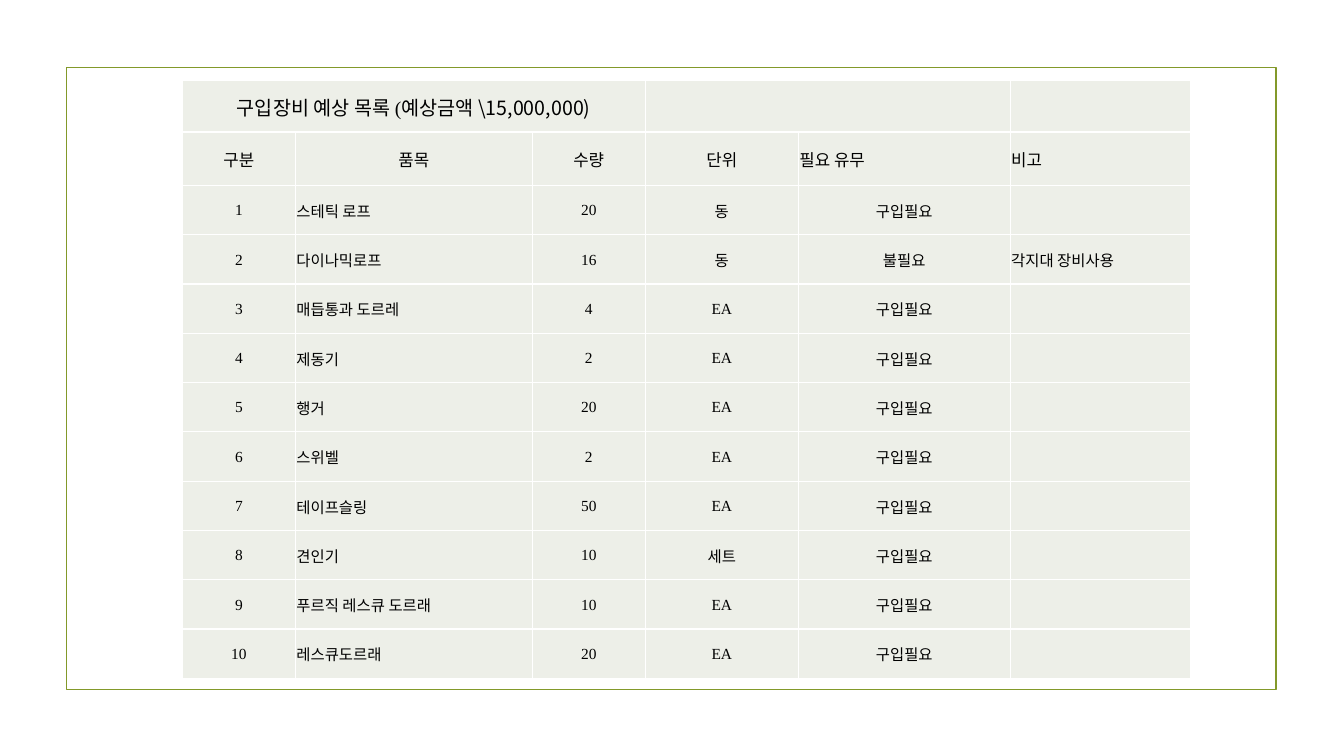
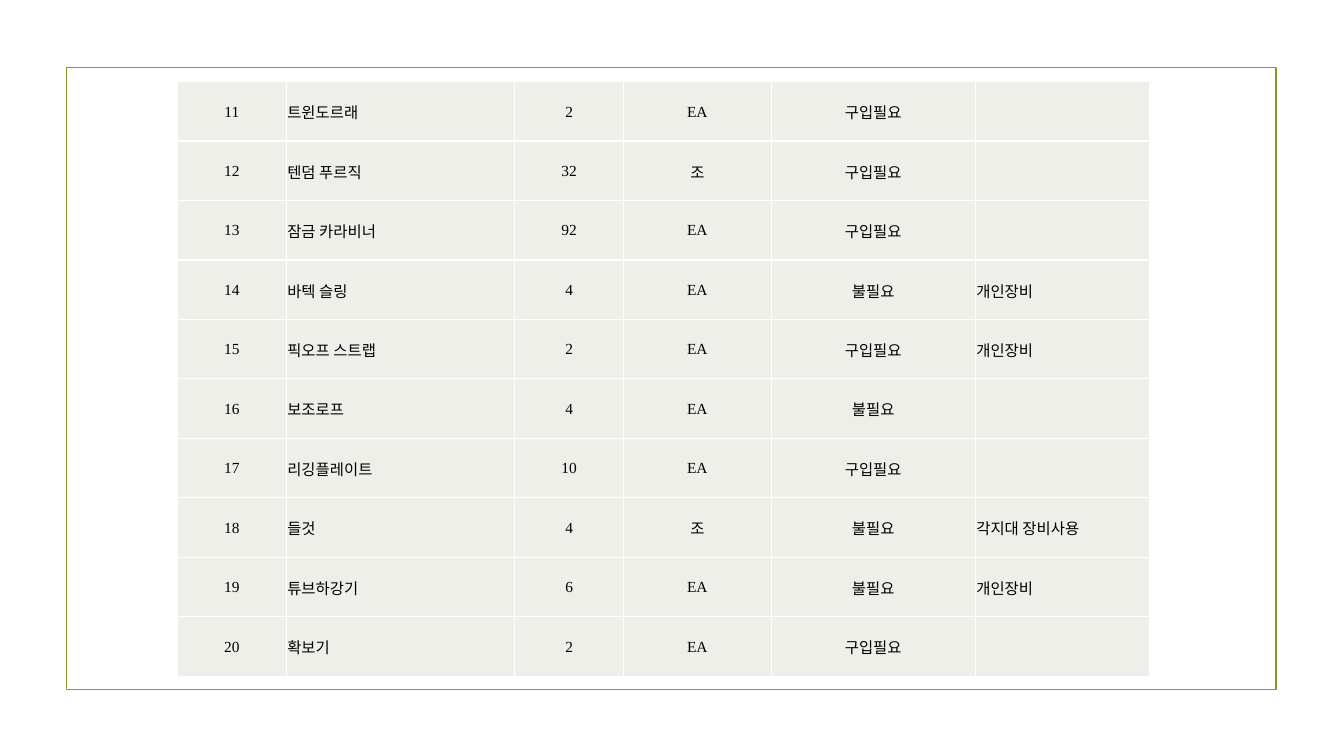
from dataclasses import dataclass

from lxml.etree import SubElement
from pptx import Presentation
from pptx.dml.color import RGBColor
from pptx.enum.shapes import MSO_SHAPE
from pptx.enum.text import MSO_ANCHOR, PP_ALIGN
from pptx.oxml import parse_xml
from pptx.oxml.ns import nsdecls, qn
from pptx.util import Inches, Pt


@dataclass(frozen=True)
class Theme:
    frame: str = "83992A"
    cell: str = "EDEFE8"
    rule: str = "FFFFFF"
    ink: str = "000000"
    latin: str = "Times New Roman"
    hangul: str = "Noto Sans CJK KR"
    title: int = 14
    head: int = 12
    body: int = 11


THEME = Theme()
BUY, SKIP = "구입필요", "불필요"
SHARED, OWN = "각지대 장비사용", "개인장비"

TITLE = [("구입장비 예상 목록 (예상금액 ", THEME.latin), ("\\15,000,000)", THEME.hangul)]
HEADS = ["구분", "품목", "수량", "단위", "필요 유무", "비고"]
ITEMS = [
    ("스테틱 로프", 20, "동", BUY, ""),
    ("다이나믹로프", 16, "동", SKIP, SHARED),
    ("매듭통과 도르레", 4, "EA", BUY, ""),
    ("제동기", 2, "EA", BUY, ""),
    ("행거", 20, "EA", BUY, ""),
    ("스위벨", 2, "EA", BUY, ""),
    ("테이프슬링", 50, "EA", BUY, ""),
    ("견인기", 10, "세트", BUY, ""),
    ("푸르직 레스큐 도르래", 10, "EA", BUY, ""),
    ("레스큐도르래", 20, "EA", BUY, ""),
    ("트윈도르래", 2, "EA", BUY, ""),
    ("텐덤 푸르직", 32, "조", BUY, ""),
    ("잠금 카라비너", 92, "EA", BUY, ""),
    ("바텍 슬링", 4, "EA", SKIP, OWN),
    ("픽오프 스트랩", 2, "EA", BUY, OWN),
    ("보조로프", 4, "EA", SKIP, ""),
    ("리깅플레이트", 10, "EA", BUY, ""),
    ("들것", 4, "조", SKIP, SHARED),
    ("튜브하강기", 6, "EA", SKIP, OWN),
    ("확보기", 2, "EA", BUY, ""),
]

PAGE = 10
SHARES = [1.12, 2.35, 1.12, 1.52, 2.1, 1.79]
TOPS = [0.51, 0.53]
BOXES = [(1.81, 0.8, 10, 5.93), (1.76, 0.81, 9.64, 5.9)]
HEAD_LEFT = {4, 5}
BODY_LEFT = {1, 5}


def add_frame(deck, slide):
    frame = slide.shapes.add_shape(
        MSO_SHAPE.RECTANGLE, Inches(0.66), Inches(0.67), Inches(12), Inches(6.17)
    )
    frame.shadow.inherit = False
    frame.fill.background()
    frame.line.color.rgb = RGBColor.from_string(THEME.frame)
    frame.line.width = Pt(1.25)
    deck.slide_master.shapes.element.insert(2, frame.element)


def style_cell(cell):
    props = cell._tc.get_or_add_tcPr()
    for side in "LRTB":
        props.append(parse_xml(
            f'<a:ln{side} {nsdecls("a")} w="{Pt(1)}"><a:solidFill>'
            f'<a:srgbClr val="{THEME.rule}"/></a:solidFill></a:ln{side}>'
        ))
    cell.fill.solid()
    cell.fill.fore_color.rgb = RGBColor.from_string(THEME.cell)
    cell.vertical_anchor = MSO_ANCHOR.MIDDLE
    cell.margin_left = cell.margin_top = cell.margin_right = Inches(0.01)
    cell.margin_bottom = 0


def write(cell, parts, size, left=False):
    para = cell.text_frame.paragraphs[0]
    para.alignment = PP_ALIGN.LEFT if left else PP_ALIGN.CENTER
    for text, face in parts:
        run = para.add_run()
        run.text = text
        run.font.size = Pt(size)
        run.font.name = face
        run.font.color.rgb = RGBColor.from_string(THEME.ink)
        SubElement(run._r.get_or_add_rPr(), qn("a:ea"), typeface=THEME.hangul)


def write_row(table, row, values, size, lefts):
    for col, value in enumerate(values):
        if value != "":
            write(table.cell(row, col), [(str(value), THEME.latin)], size, col in lefts)


def add_list(slide, box, start, tops):
    items = ITEMS[start:start + PAGE]
    left, top, width, height = box
    rows = len(tops) + len(items)
    table = slide.shapes.add_table(rows, len(HEADS), *map(Inches, box)).table
    table.first_row = table.horz_banding = False
    for col, share in zip(table.columns, SHARES):
        col.width = Inches(width * share / sum(SHARES))
    step = (height - sum(tops)) / len(items)
    for row, size in zip(table.rows, tops + [step] * len(items)):
        row.height = Inches(size)
    for cell in table.iter_cells():
        style_cell(cell)
    if tops:
        table.cell(0, 0).merge(table.cell(0, 2))
        table.cell(0, 3).merge(table.cell(0, 4))
        write(table.cell(0, 0), TITLE, THEME.title)
        write_row(table, 1, HEADS, THEME.head, HEAD_LEFT)
    for pos, item in enumerate(items):
        values = (start + pos + 1, *item)
        write_row(table, len(tops) + pos, values, THEME.body, BODY_LEFT)


def main():
    deck = Presentation()
    deck.slide_width, deck.slide_height = Inches(13.33), Inches(7.5)
    for page, box in enumerate(BOXES):
        slide = deck.slides.add_slide(deck.slide_layouts[6])
        if page == 0:
            add_frame(deck, slide)
        add_list(slide, box, page * PAGE, [] if page else TOPS)
    deck.save("out.pptx")


if __name__ == "__main__":
    main()
